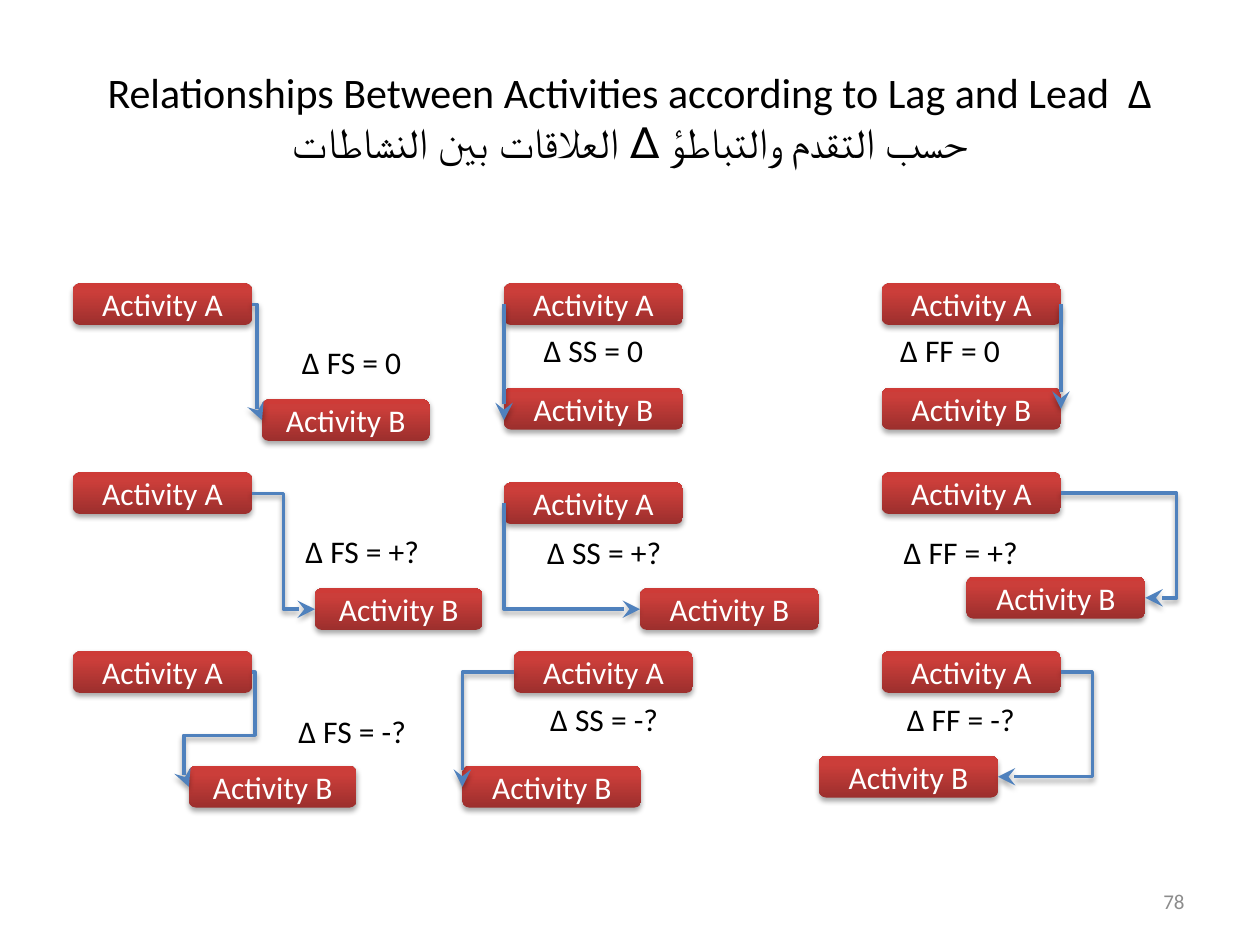
from dataclasses import dataclass

from lxml.etree import SubElement
from pptx import Presentation
from pptx.dml.color import RGBColor
from pptx.enum.shapes import MSO_CONNECTOR, MSO_SHAPE
from pptx.enum.text import MSO_ANCHOR as Anchor, MSO_AUTO_SIZE as AutoSize, PP_ALIGN as Align
from pptx.oxml.ns import qn
from pptx.util import Inches, Pt


@dataclass(frozen=True)
class Theme:
    font: str = "Calibri"
    ink: str = "000000"
    box_ink: str = "FFFFFF"
    muted: str = "8C8C8C"
    link: str = "4F81BD"
    shadow: str = "000000"
    box_stops: tuple = ((0, "9C2F2D"), (80, "CB3E3A"), (100, "CE3B37"))
    title_size: int = 24
    body_size: int = 18
    number_size: int = 12
    link_width: int = 2


@dataclass(frozen=True)
class Relation:
    """One A-to-B pair; kind FS, SS or FF decides which sides are linked."""
    kind: str
    lag: str
    first: tuple
    second: tuple
    label: tuple
    bend: str = "bentConnector3"
    adjust: tuple = (0.5,)
    turned: bool = False
    overshoot: float = 0


BOX_WIDTH, BOX_HEIGHT = 1.42, 0.33
FS_SECOND_WIDTH = 1.33
LEFT, MIDDLE, RIGHT = 0.58, 4, 7

RELATIONS = (
    Relation("FS", "0", (LEFT, 2.25), (2.08, 3.17), (2.25, 2.67)),
    Relation("FS", "+?", (LEFT, 3.75), (2.5, 4.67), (2.25, 4.17)),
    Relation("FS", "-?", (LEFT, 5.17), (1.5, 6.08), (2.17, 5.6),
             "bentConnector5", (-0.05, 0.55, 1.08)),
    Relation("SS", "0", (MIDDLE, 2.25), (MIDDLE, 3.08), (4.17, 2.58),
             turned=True, overshoot=0.09),
    Relation("SS", "+?", (MIDDLE, 3.83), (5.08, 4.67), (4.17, 4.18), adjust=(0,)),
    Relation("SS", "-?", (4.08, 5.17), (3.67, 6.08), (4.17, 5.51),
             "bentConnector2", ()),
    Relation("FF", "0", (RIGHT, 2.25), (RIGHT, 3.08), (RIGHT, 2.58),
             "bentConnector4", (-2.22, 0.6)),
    Relation("FF", "+?", (RIGHT, 3.75), (7.67, 4.58), (RIGHT, 4.18), adjust=(1.37,)),
    Relation("FF", "-?", (RIGHT, 5.17), (6.5, 6), (RIGHT, 5.51), adjust=(-0.5,)),
)


class SlideBuilder:
    def __init__(self, slide, theme):
        self.slide = slide
        self.theme = theme

    def fill_text(self, frame, text, size, color, align=Align.CENTER, **frame_format):
        for name, value in {"word_wrap": True, **frame_format}.items():
            setattr(frame, name, value)
        paragraph = frame.paragraphs[0]
        paragraph.text = text
        paragraph.alignment = align
        for run in paragraph.runs:
            font_format = {"name": self.theme.font, "size": Pt(size), "bold": False}
            for name, value in font_format.items():
                setattr(run.font, name, value)
            run.font.color.rgb = RGBColor.from_string(color)

    def cast_shadow(self, properties):
        """Give a shape's properties a soft drop shadow."""
        effects = properties.find(qn("a:effectLst"))
        if effects is None:
            effects = SubElement(properties, qn("a:effectLst"))
        shadow = SubElement(effects, qn("a:outerShdw"), blurRad="40000",
                            dist="23000", dir="5400000", rotWithShape="0")
        color = SubElement(shadow, qn("a:srgbClr"), val=self.theme.shadow)
        SubElement(color, qn("a:alpha"), val="35000")

    def title(self, text):
        heading = self.slide.shapes.title
        place = {"left": 0.5, "top": 0.3, "width": 9, "height": 1.25}
        for name, value in place.items():
            setattr(heading, name, Inches(value))
        self.fill_text(heading.text_frame, text, self.theme.title_size, self.theme.ink,
                       vertical_anchor=Anchor.MIDDLE)

    def text(self, place, text, size, color, align=Align.CENTER, **frame_format):
        box = self.slide.shapes.add_textbox(*map(Inches, place))
        self.fill_text(box.text_frame, text, size, color, align, **frame_format)

    def activity(self, place, name):
        box = self.slide.shapes.add_shape(MSO_SHAPE.ROUNDED_RECTANGLE, *map(Inches, place))
        box.fill.gradient()
        box.fill.gradient_angle = 90
        properties = box.element.spPr
        stops = properties.find(qn("a:gradFill")).find(qn("a:gsLst"))
        stops.clear()
        for percent, color in self.theme.box_stops:
            stop = SubElement(stops, qn("a:gs"), pos=str(percent * 1000))
            SubElement(stop, qn("a:srgbClr"), val=color)
        box.line.fill.background()
        box.shadow.inherit = False
        self.cast_shadow(properties)
        self.fill_text(box.text_frame, name, self.theme.body_size, self.theme.box_ink,
                       vertical_anchor=Anchor.MIDDLE)

    def link(self, begin, end, bend, adjust, turned):
        """Draw an elbow arrow; a turned one is a vertical drop set by rotation."""
        if turned:
            x, middle, half = begin[0], (begin[1] + end[1]) / 2, (end[1] - begin[1]) / 2
            begin, end = (x - half, middle), (x + half, middle)
        arrow = self.slide.shapes.add_connector(
            MSO_CONNECTOR.ELBOW, *map(Inches, (*begin, *end)))
        arrow.line.color.rgb = RGBColor.from_string(self.theme.link)
        arrow.line.width = Pt(self.theme.link_width)
        properties = arrow.element.spPr
        if turned:
            properties.find(qn("a:xfrm")).set("rot", "5400000")
        geometry = properties.find(qn("a:prstGeom"))
        geometry.set("prst", bend)
        guides = geometry.find(qn("a:avLst"))
        for index, share in enumerate(adjust, 1):
            SubElement(guides, qn("a:gd"), name=f"adj{index}",
                       fmla=f"val {round(share * 100000)}")
        SubElement(properties.find(qn("a:ln")), qn("a:tailEnd"),
                   type="stealth", w="lg", len="lg")
        self.cast_shadow(properties)

    def relation(self, relation):
        second_width = FS_SECOND_WIDTH if relation.kind == "FS" else BOX_WIDTH
        self.activity((*relation.first, BOX_WIDTH, BOX_HEIGHT), "Activity A")
        self.activity((*relation.second, second_width, BOX_HEIGHT), "Activity B")

        leaves, enters = relation.kind
        (first_x, first_y), (second_x, second_y) = relation.first, relation.second
        begin = (first_x + BOX_WIDTH * (leaves == "F"), first_y + BOX_HEIGHT / 2)
        end = (second_x + second_width * (enters == "F"),
               second_y + BOX_HEIGHT / 2 + relation.overshoot)
        self.link(begin, end, relation.bend, relation.adjust, relation.turned)

    def label(self, relation):
        size = (1.08, 0.42) if relation.lag == "0" else (1.25, 0.4)
        self.text((*relation.label, *size), f"∆ {relation.kind} = {relation.lag}",
                  self.theme.body_size, self.theme.ink,
                  auto_size=AutoSize.SHAPE_TO_FIT_TEXT)


def main():
    deck = Presentation()
    deck.slide_width, deck.slide_height = Inches(10), Inches(7.5)
    theme = Theme()
    builder = SlideBuilder(deck.slides.add_slide(deck.slide_layouts[5]), theme)

    builder.title("Relationships Between Activities according to Lag and Lead  ∆\v"
                  "حسب التقدم والتباطؤ ∆ العلاقات بين النشاطات")
    builder.text((7.17, 6.95, 2.33, 0.4), "78", theme.number_size, theme.muted,
                 Align.RIGHT, vertical_anchor=Anchor.MIDDLE)
    for relation in RELATIONS:
        builder.relation(relation)
    for relation in RELATIONS:
        builder.label(relation)

    deck.save("out.pptx")


if __name__ == "__main__":
    main()
